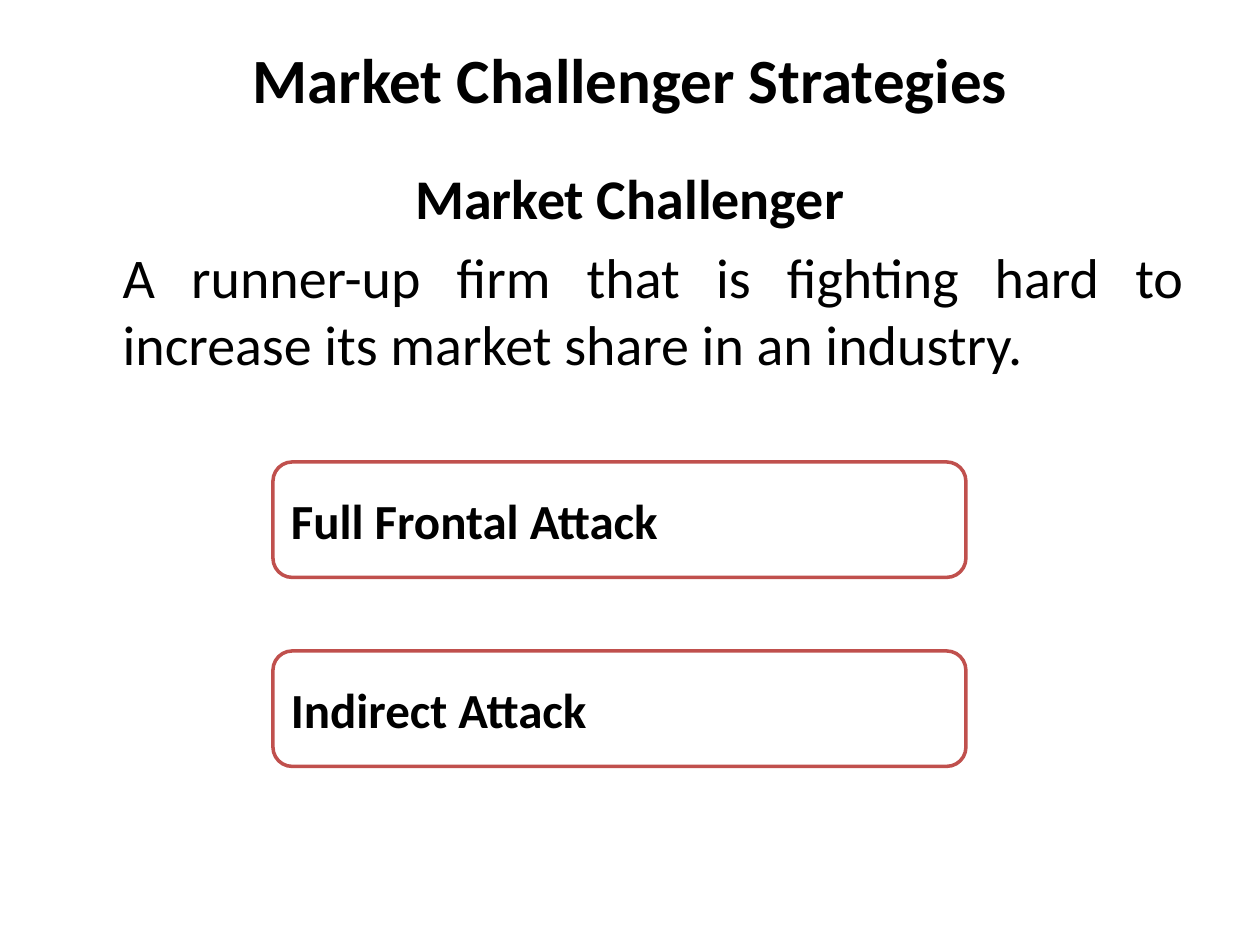
import dataclasses

import pptx
import pptx.dml.color
import pptx.enum.shapes
import pptx.enum.text
import pptx.oxml.ns
import pptx.util

Pt = pptx.util.Pt
RGB = pptx.dml.color.RGBColor
ALIGN = pptx.enum.text.PP_ALIGN
ANCHOR = pptx.enum.text.MSO_ANCHOR


@dataclasses.dataclass(frozen=True)
class Theme:
    font: str = "Calibri"
    text: RGB = RGB(0, 0, 0)
    fill: RGB = RGB(255, 255, 255)
    outline: RGB = RGB(0xC0, 0x50, 0x4D)
    title_size: int = 36
    body_size: int = 32
    box_size: int = 28


THEME = Theme()


def write(p, text, size, bold, align):
    p.text = text
    p.alignment = align
    for r in p.runs:
        r.font.name = THEME.font
        r.font.size = Pt(size)
        r.font.bold = bold
        r.font.color.rgb = THEME.text


def set_title(s, text):
    sp = s.shapes.title
    sp.left, sp.top, sp.width, sp.height = Pt(36), Pt(18), Pt(648), Pt(54)
    tf = sp.text_frame
    tf.vertical_anchor = ANCHOR.MIDDLE
    write(tf.paragraphs[0], text, THEME.title_size, True, ALIGN.CENTER)


def add_definition(s, term, meaning):
    tf = s.shapes.add_textbox(Pt(36), Pt(90), Pt(648), Pt(392.4)).text_frame
    tf.word_wrap = True
    write(tf.paragraphs[0], term, THEME.body_size, True, ALIGN.CENTER)
    p = tf.add_paragraph()
    p.space_before = Pt(6.4)
    p._p.get_or_add_pPr().set("marL", str(Pt(27)))
    write(p, meaning, THEME.body_size, False, ALIGN.JUSTIFY)


def add_strategy_box(s, text, top):
    sp = s.shapes.add_shape(
        pptx.enum.shapes.MSO_SHAPE.ROUNDED_RECTANGLE,
        Pt(156), Pt(top), Pt(396), Pt(66))
    sp.shadow.inherit = False
    sp.fill.solid()
    sp.fill.fore_color.rgb = THEME.fill
    sp.line.color.rgb = THEME.outline
    sp.line.width = Pt(2)
    tf = sp.text_frame
    tf.word_wrap = True
    tf.vertical_anchor = ANCHOR.MIDDLE
    write(tf.paragraphs[0], text, THEME.box_size, True, ALIGN.JUSTIFY)


def main():
    prs = pptx.Presentation()
    prs.slide_width, prs.slide_height = Pt(720), Pt(540)
    s = prs.slides.add_slide(prs.slide_layouts.get_by_name("Title Only"))
    set_title(s, "Market Challenger Strategies")
    add_definition(
        s, "Market Challenger",
        "A runner-up firm that is fighting hard to increase its market share "
        "in an industry.")
    for i, strategy in enumerate(("Full Frontal Attack", "Indirect Attack")):
        add_strategy_box(s, strategy, 264 + 108 * i)
    prs.save("out.pptx")


if __name__ == "__main__":
    main()
